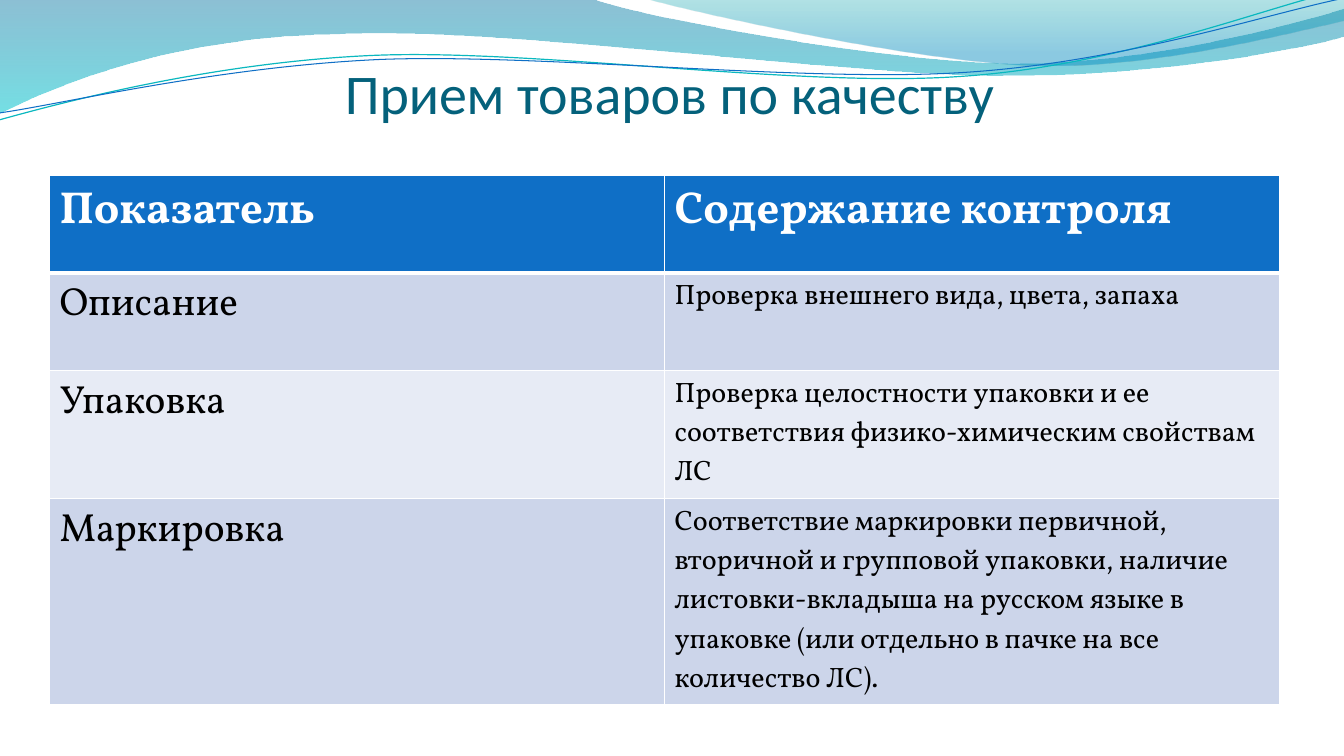
from dataclasses import dataclass

from lxml import etree
from pptx import Presentation
from pptx import util as u
from pptx.dml.color import RGBColor
from pptx.enum import text
from pptx.oxml.ns import qn


@dataclass(frozen=True)
class Theme:
    title_font: str = "Calibri"
    body_font: str = "Vollkorn"
    title_size: int = 40
    header_size: int = 32
    label_size: int = 28
    detail_size: int = 20
    title: str = "04617B"
    header: str = "0F6FC6"
    band_dark: str = "CCD5EA"
    band_light: str = "E7EBF5"
    white: str = "FFFFFF"
    ink: str = "000000"
    teal_line: str = "0AB8BF"
    # Each stop: position, colour, opacity in percent
    broad_wave: tuple = ((0, "0074A1", 45), (1, "00C6CF", 55))
    right_wave: tuple = ((0, "00A1A9", 30), (0.8, "008BBF", 45))


THEME = Theme()
COLUMNS, ROWS = 13.33, 7.5  # the page grid has one-inch cells

# A pair of numbers is a corner; six numbers are a cubic curve's two handles and end.
BROAD_WAVE = [
    (0, 0), (5.87, -0.01),
    (6.34, 0.17, 8.85, 0.63, 10.11, 0.63), (11.38, 0.63, 12.78, 0.26, 13.33, 0.09),
    (13.35, 0.36),
    (13.11, 0.44, 11.6, 0.76, 9.94, 0.75), (8.29, 0.75, 5.09, 0.28, 3.43, 0.34),
    (1.72, 0.36, 0.61, 0.83, -0.01, 1.13), (0, 0),
]
RIGHT_WAVE = [
    (6.39, -0.01),
    (6.79, 0.11, 9.09, 0.62, 10.25, 0.65), (11.41, 0.69, 12.82, 0.32, 13.33, 0.21),
    (13.33, 0), (6.39, -0.01),
]
TEAL_LINE = [
    (-0.01, 1.19), (0.64, 1.01, 2.11, 0.62, 3.69, 0.55),
    (5.27, 0.48, 7.9, 0.87, 9.5, 0.76), (11.1, 0.66, 12.52, 0.08, 13.31, -0.1),
]
BLUE_LINE = [
    (0, 1.12), (0.63, 1.03, 2.18, 0.66, 3.78, 0.59),
    (5.37, 0.53, 7.96, 0.82, 9.55, 0.72), (11.15, 0.62, 12.55, 0.14, 13.34, -0.02),
]

CHECKS = [
    ("Показатель", "Содержание контpоля"),
    ("Описание", "Провeрка внешнего вида, цветa, запаха"),
    ("Упаковка", "Проверкa целостности упаковки и ее соответствия "
                 "физико-химическим свойствам ЛС"),
    ("Маркировка", "Соответствие маркировки первичной, вторичной и групповой упаковки, "
                   "нaличие листовки-вкладыша на русском языке в упаковке "
                   "(или отдельно в пачке на все количество ЛС)."),
]
ROW_HEIGHTS = [0.97, 0.97, 1.27, 2.03]


def grid(cells):
    return u.Inches(cells)


def color(value):
    return RGBColor.from_string(value)


def add_outline(page, outline, close):
    """Build the outline through its end points, then bend the curved segments."""
    first, *rest = [(grid(part[-2]), grid(part[-1])) for part in outline]
    builder = page.shapes.build_freeform(*first)
    builder.add_line_segments(rest, close=close)
    shape = builder.convert_to_shape()
    shape.shadow.inherit = False
    segments = list(shape._element.spPr.iter(qn("a:lnTo")))
    for segment, part in zip(segments, outline[1:]):
        if len(part) == 6:
            bend(shape, segment, part)
    return shape


def bend(shape, segment, part):
    curve = etree.Element(qn("a:cubicBezTo"))
    for x, y in zip(part[::2], part[1::2]):
        etree.SubElement(curve, qn("a:pt"), x=str(grid(x) - shape.left),
                         y=str(grid(y) - shape.top))
    segment.getparent().replace(segment, curve)


def add_wave(page, outline, stops):
    wave = add_outline(page, outline, close=True)
    wave.line.fill.background()
    wave.fill.gradient()
    wave.fill.gradient_angle = 270
    for stop, (position, value, _) in zip(wave.fill.gradient_stops, stops):
        stop.position = position
        stop.color.rgb = color(value)
    tints = wave._element.spPr.iter(qn("a:srgbClr"))
    for tint, (_, _, opacity) in zip(tints, stops):
        etree.SubElement(tint, qn("a:alpha"), val=str(opacity * 1000))


def add_wave_line(page, outline, value, width):
    line = add_outline(page, outline, close=False)
    line.fill.background()
    line.line.color.rgb = color(value)
    line.line.width = u.Pt(width)


def write(para, words, font, size, value, bold=False):
    span = para.add_run()
    span.text = words
    span.font.name = font
    span.font.size = u.Pt(size)
    span.font.bold = bold
    span.font.color.rgb = color(value)


def set_title(page, words):
    box = page.shapes.title
    box.left, box.top, box.width, box.height = map(grid, (0.64, 0, 12, 1.25))
    frame = box.text_frame
    frame.margin_left = frame.margin_right = frame.margin_bottom = 0
    frame.margin_top = grid(0.05)
    frame.vertical_anchor = text.MSO_ANCHOR.BOTTOM
    frame.word_wrap = True
    para = frame.paragraphs[0]
    para.alignment = text.PP_ALIGN.CENTER
    write(para, words, THEME.title_font, THEME.title_size, THEME.title)
    page.shapes._spTree.append(box._element)  # bring in front of the waves


def set_borders(cell, bottom):
    properties = cell._tc.get_or_add_tcPr()
    widths = {"lnL": 1, "lnR": 1, "lnT": 1, "lnB": bottom}
    for index, (side, width) in enumerate(widths.items()):
        border = etree.Element(qn(f"a:{side}"), w=str(u.Pt(width)))
        fill = etree.SubElement(border, qn("a:solidFill"))
        etree.SubElement(fill, qn("a:srgbClr"), val=THEME.white)
        properties.insert(index, border)


def add_check_table(page):
    width = 12.2
    frame = page.shapes.add_table(len(CHECKS), 2, grid(0.49), grid(1.74),
                                  grid(width), grid(sum(ROW_HEIGHTS)))
    table = frame.table
    for column in table.columns:
        column.width = grid(width / 2)
    for row, entries in enumerate(CHECKS):
        table.rows[row].height = grid(ROW_HEIGHTS[row])
        header = row == 0
        band = THEME.band_dark if row % 2 else THEME.band_light
        sizes = (THEME.header_size,) * 2 if header else (THEME.label_size, THEME.detail_size)
        for column, (words, size) in enumerate(zip(entries, sizes)):
            cell = table.cell(row, column)
            cell.fill.solid()
            cell.fill.fore_color.rgb = color(THEME.header if header else band)
            set_borders(cell, bottom=3 if header else 1)
            write(cell.text_frame.paragraphs[0], words, THEME.body_font, size,
                  THEME.white if header else THEME.ink, bold=header)


def main():
    deck = Presentation()
    deck.slide_width, deck.slide_height = grid(COLUMNS), grid(ROWS)
    page = deck.slides.add_slide(deck.slide_layouts.get_by_name("Title Only"))
    add_wave(page, BROAD_WAVE, THEME.broad_wave)
    add_wave(page, RIGHT_WAVE, THEME.right_wave)
    add_wave_line(page, TEAL_LINE, THEME.teal_line, 0.85)
    add_wave_line(page, BLUE_LINE, THEME.header, 0.75)
    set_title(page, "Прием товаров по качеству")
    add_check_table(page)
    deck.save("out.pptx")


if __name__ == "__main__":
    main()
